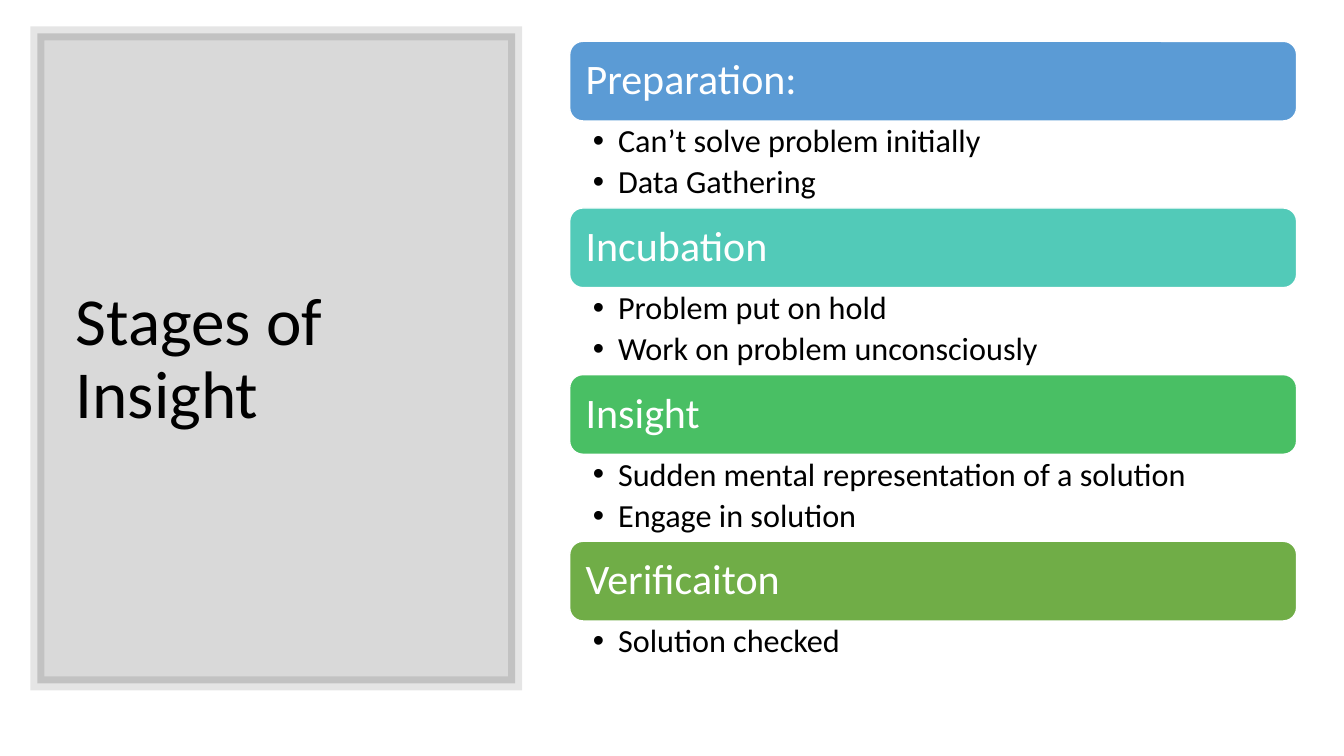
from pptx import Presentation
from pptx.dml.color import RGBColor
from pptx.enum.shapes import MSO_SHAPE
from pptx.enum.text import MSO_ANCHOR, MSO_AUTO_SIZE, PP_ALIGN
from pptx.oxml.ns import qn
from pptx.util import Inches, Pt
from lxml import etree

RECT, ROUND = MSO_SHAPE.RECTANGLE, MSO_SHAPE.ROUNDED_RECTANGLE
TOP, MIDDLE = MSO_ANCHOR.TOP, MSO_ANCHOR.MIDDLE
LEFT = PP_ALIGN.LEFT
FIXED = MSO_AUTO_SIZE.NONE

BLACK = RGBColor(0x00, 0x00, 0x00)
WHITE = RGBColor(0xFF, 0xFF, 0xFF)
BLUE = RGBColor(0x5B, 0x9B, 0xD5)
TEAL = RGBColor(0x52, 0xCA, 0xB8)
GREEN = RGBColor(0x49, 0xBF, 0x64)
OLIVE = RGBColor(0x70, 0xAD, 0x47)

STAGES = [
    ("Preparation:", BLUE, ["Can’t solve problem initially", "Data Gathering"]),
    ("Incubation", TEAL, ["Problem put on hold", "Work on problem unconsciously"]),
    ("Insight", GREEN, ["Sudden mental representation of a solution",
                        "Engage in solution"]),
    ("Verificaiton", OLIVE, ["Solution checked"]),
]

# Grid of the stage column, in inches
COL, WIDE = 5.65, 7.21
FIRST, LAST = 0.41, 5.37
STEP = (LAST - FIRST) / (len(STAGES) - 1)
BAR = 0.79


def style(frame, size, color, anchor, side, edge):
    frame.word_wrap = True
    frame.auto_size = FIXED
    frame.vertical_anchor = anchor
    frame.margin_left = frame.margin_right = Inches(side)
    frame.margin_top = frame.margin_bottom = Inches(edge)
    for para in frame.paragraphs:
        para.alignment = LEFT
        para.line_spacing = 0.9
        for run in para.runs:
            run.font.name = "Calibri"
            run.font.size = Pt(size)
            run.font.color.rgb = color


def fade(fill, share):
    color = fill._xPr.find(qn("a:solidFill"))[0]
    etree.SubElement(color, qn("a:alpha")).set("val", str(share * 1000))


deck = Presentation()
deck.slide_width, deck.slide_height = Inches(13.33), Inches(7.5)
slide = deck.slides.add_slide(deck.slide_layouts[5])
shapes = slide.shapes

# Grey panel, behind the title
panel = shapes.add_shape(RECT, Inches(0.37), Inches(0.33), Inches(4.74), Inches(6.45))
panel.shadow.inherit = False
panel.fill.solid()
panel.fill.fore_color.rgb = BLACK
fade(panel.fill, 15)
panel.line.width = Pt(10)
panel.line.fill.solid()
panel.line.color.rgb = BLACK
fade(panel.line.fill, 10)
etree.SubElement(panel.line._ln, qn("a:miter")).set("lim", "800000")

# Title
title = shapes.title
title.left, title.top = Inches(0.65), Inches(0.7)
title.width, title.height = Inches(4.16), Inches(5.75)
title.text_frame.text = "Stages of Insight"
style(title.text_frame, 48, BLACK, MIDDLE, 0.1, 0.05)
shapes._spTree.remove(panel._element)
title._element.addprevious(panel._element)

# Stages: a coloured bar with its list below
for row, (name, color, points) in enumerate(STAGES):
    top = FIRST + row * STEP
    bar = shapes.add_shape(ROUND, Inches(COL), Inches(top), Inches(WIDE), Inches(BAR))
    bar.shadow.inherit = False
    bar.fill.solid()
    bar.fill.fore_color.rgb = color
    bar.line.color.rgb = WHITE
    bar.line.width = Pt(1)
    bar.text_frame.text = name
    style(bar.text_frame, 30, WHITE, MIDDLE, 0.12, 0.08)

    box = shapes.add_textbox(Inches(COL), Inches(top + BAR), Inches(WIDE),
                             Inches(0.87 if len(points) > 1 else 0.54))
    box.text_frame.text = "\n".join(points)
    style(box.text_frame, 23, BLACK, TOP, 0.23, 0.04)
    for para in box.text_frame.paragraphs:
        para.space_after = Pt(4.6)
        props = para._p.get_or_add_pPr()
        props.set("marL", str(Inches(0.25)))
        props.set("indent", str(Inches(-0.25)))
        etree.SubElement(props, qn("a:buFont")).set("typeface", "Arial")
        etree.SubElement(props, qn("a:buChar")).set("char", "•")

deck.save("out.pptx")
